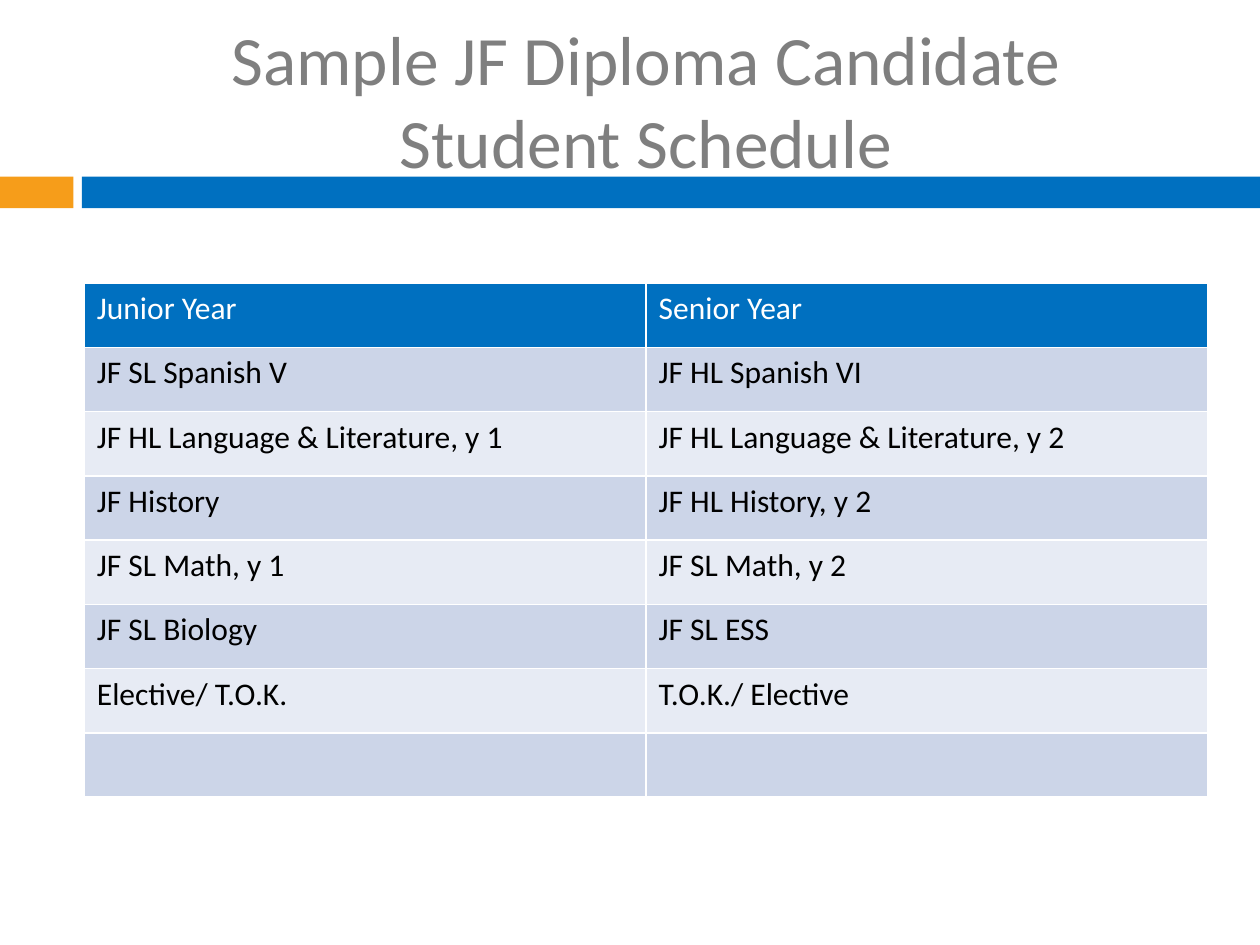
from pptx import Presentation
from pptx.dml.color import RGBColor
from pptx.enum.shapes import MSO_SHAPE as Shape
from pptx.enum.text import MSO_ANCHOR as Anchor, PP_ALIGN as Align
from pptx.util import Cm, Pt

BLUE, ORANGE, GREY = "0070C0", "F69D1A", "7F7F7F"
BANDS = ("E7EBF4", "CCD5E8")
COURSES = [
    ("Junior Year", "Senior Year"),
    ("JF SL Spanish V", "JF HL Spanish VI"),
    ("JF HL Language & Literature, y 1", "JF HL Language & Literature, y 2"),
    ("JF History", "JF HL History, y 2"),
    ("JF SL Math, y 1", "JF SL Math, y 2"),
    ("JF SL Biology", "JF SL ESS"),
    ("Elective/ T.O.K.", "T.O.K./ Elective"),
    ("", ""),
]


def fill(obj, color):
    obj.fill.solid()
    obj.fill.fore_color.rgb = RGBColor.from_string(color)


def style(p, size, color):
    for r in p.runs:
        for name, value in {"name": "Calibri", "size": Pt(size), "bold": False}.items():
            setattr(r.font, name, value)
        r.font.color.rgb = RGBColor.from_string(color)


def add_band(s, x, y, w, h):
    tab, gap = 1.48, 0.17
    rest = tab + gap
    for left, width, color in ((x, tab, ORANGE), (x + rest, w - rest, BLUE)):
        sp = s.shapes.add_shape(Shape.RECTANGLE, Cm(left), Cm(y), Cm(width), Cm(h))
        sp.shadow.inherit = False
        fill(sp, color)
        sp.line.fill.background()


def add_title(s, x, y, w, h):
    tf = s.shapes.add_textbox(Cm(x), Cm(y), Cm(w), Cm(h)).text_frame
    for name, value in {"word_wrap": True, "vertical_anchor": Anchor.MIDDLE}.items():
        setattr(tf, name, value)
    p = tf.paragraphs[0]
    p.text = "Sample JF Diploma Candidate\vStudent Schedule"
    p.alignment = Align.CENTER
    style(p, 39.6, GREY)


def add_schedule(s, x, y, w, h):
    table = s.shapes.add_table(
        len(COURSES), len(COURSES[0]), Cm(x), Cm(y), Cm(w), Cm(h)
    ).table
    for i, row in enumerate(COURSES):
        for j, course in enumerate(row):
            cell = table.cell(i, j)
            fill(cell, BANDS[i % 2] if i else BLUE)
            cell.text = course
            style(cell.text_frame.paragraphs[0], 18, "000000" if i else "FFFFFF")


def main():
    prs = Presentation()
    prs.slide_width, prs.slide_height = Cm(25.4), Cm(19.05)
    s = prs.slides.add_slide(prs.slide_layouts[6])
    add_band(s, 0, 3.56, 25.4, 0.64)
    add_title(s, 1.7, 0.63, 22.65, 2.75)
    add_schedule(s, 1.7, 5.71, 22.65, 10.36)
    prs.save("out.pptx")


if __name__ == "__main__":
    main()
